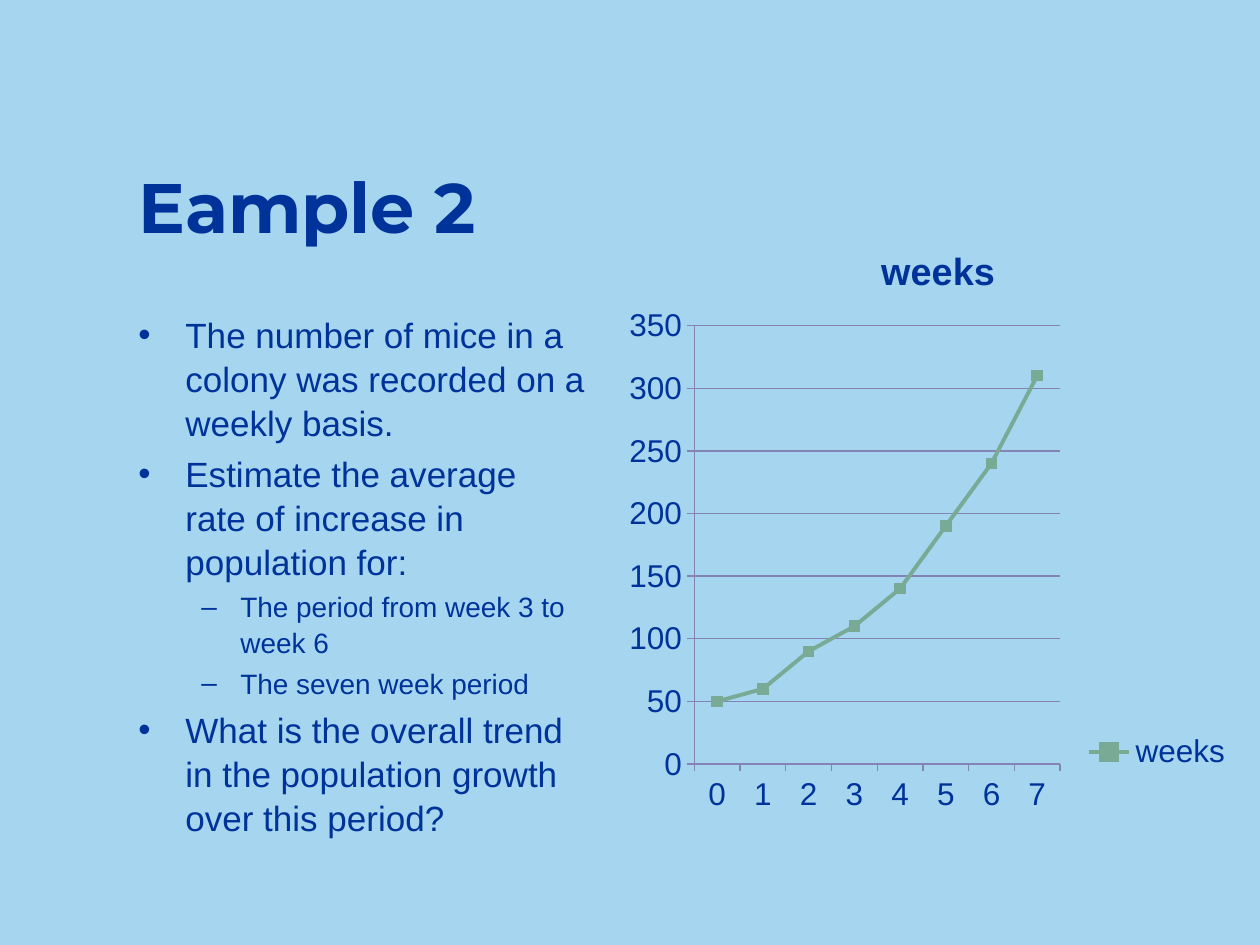
from lxml import etree
from pptx import Presentation
from pptx.chart.data import CategoryChartData
from pptx.dml.color import RGBColor
from pptx.enum.chart import XL_CHART_TYPE, XL_LEGEND_POSITION, XL_MARKER_STYLE, XL_TICK_MARK
from pptx.enum.text import MSO_ANCHOR
from pptx.oxml import parse_xml
from pptx.oxml.ns import nsdecls, qn
from pptx.util import Pt

LINES = XL_CHART_TYPE.LINE_MARKERS
RIGHT = XL_LEGEND_POSITION.RIGHT
SQUARE = XL_MARKER_STYLE.SQUARE
OUT = XL_TICK_MARK.OUTSIDE
MIDDLE = MSO_ANCHOR.MIDDLE
PX = 914400 / 126
COLORS = {"back": "A5D5EF", "text": "003399", "line": "78AA95", "grid": "8484B4"}


def color(name):
    return RGBColor.from_string(COLORS[name])


def place(part, after, inner=False, **spots):
    """Give a chart part a fixed layout, as fractions of the chart."""
    for old in part.findall(qn("c:layout")):
        part.remove(old)
    target = '<c:layoutTarget val="inner"/>' if inner else ""
    modes = "".join(f'<c:{key}Mode val="edge"/>' for key in "xy")
    sizes = "".join(f'<c:{key} val="{val}"/>' for key, val in spots.items())
    layout = parse_xml(f'<c:layout {nsdecls("c")}><c:manualLayout>{target}{modes}{sizes}'
                       '</c:manualLayout></c:layout>')
    if after:
        part.find(qn(after)).addnext(layout)
    else:
        part.insert(0, layout)


deck = Presentation()
deck.slide_width, deck.slide_height = round(1260 * PX), round(945 * PX)
slide = deck.slides.add_slide(deck.slide_layouts[6])
slide.background.fill.solid()
slide.background.fill.fore_color.rgb = color("back")

# Title
box = slide.shapes.add_textbox(*[round(n * PX) for n in (126, 116, 966, 180)])
frame = box.text_frame
frame.word_wrap = True
frame.vertical_anchor = MIDDLE
frame.text = "Eample 2"
font = frame.paragraphs[0].runs[0].font
font.name, font.size, font.bold = "Montserrat", Pt(40), True
font.color.rgb = color("text")

# Bullets: level and text
items = [
    (0, "The number of mice in a colony was recorded on a weekly basis."),
    (0, "Estimate the average rate of increase in population for:"),
    (1, "The period from week 3 to week 6"),
    (1, "The seven week period"),
    (0, "What is the overall trend in the population growth over this period?"),
]
# Mark, text size, left margin and hanging indent of each level
levels = [("•", 20, 47, 47), ("–", 16, 102, 39)]
box = slide.shapes.add_textbox(*[round(n * PX) for n in (126, 305, 473, 546)])
frame = box.text_frame
frame.word_wrap = True
for i, (level, text) in enumerate(items):
    mark, size, left, hang = levels[level]
    para = frame.add_paragraph() if i else frame.paragraphs[0]
    para.text = text
    para.level = level
    para.line_spacing = 1.05
    para.space_before = Pt(size * 0.2 if i else 0)
    props = para._p.get_or_add_pPr()
    props.set("marL", str(round(left * PX)))
    props.set("indent", str(round(-hang * PX)))
    etree.SubElement(props, qn("a:buFont")).set("typeface", "Arial")
    etree.SubElement(props, qn("a:buChar")).set("char", mark)
    font = para.runs[0].font
    font.name, font.size = "Arial", Pt(size)
    font.color.rgb = color("text")

# Line chart
data = CategoryChartData()
data.categories = [str(week) for week in range(8)]
data.add_series("weeks", (50, 60, 90, 110, 140, 190, 240, 310))
spot = [round(n * PX) for n in (620, 210, 620, 609)]
chart = slide.shapes.add_chart(LINES, *spot, data).chart
chart.font.name, chart.font.size = "Arial", Pt(18)
chart.font.color.rgb = color("text")

# Chart title and legend
chart.has_title = True
frame = chart.chart_title.text_frame
frame.text = "weeks"
font = frame.paragraphs[0].runs[0].font
font.name, font.size, font.bold = "Arial", Pt(21.6), True
font.color.rgb = color("text")
chart.has_legend = True
chart.legend.position = RIGHT
chart.legend.include_in_layout = False

# Axes
for axis in (chart.category_axis, chart.value_axis):
    axis.major_tick_mark = OUT
    axis.format.line.color.rgb = color("grid")
    axis.format.line.width = Pt(0.75)
scale = chart.value_axis
scale.minimum_scale, scale.maximum_scale, scale.major_unit = 0, 350, 50
scale.has_major_gridlines = True
scale.major_gridlines.format.line.color.rgb = color("grid")
scale.major_gridlines.format.line.width = Pt(0.75)

# Series
plot = chart.plots[0]
plot.vary_by_categories = False
series = plot.series[0]
series.smooth = False
series.format.line.color.rgb = color("line")
series.format.line.width = Pt(2.25)
series.marker.style, series.marker.size = SQUARE, 6
series.marker.format.fill.solid()
series.marker.format.fill.fore_color.rgb = color("line")
series.marker.format.line.color.rgb = color("line")

# Layout of the chart parts
root = chart._chartSpace.chart
place(root.plotArea, None, inner=True, x=0.12, y=0.19, w=0.59, h=0.72)
place(chart.chart_title._element, "c:tx", x=0.41, y=0.05)
place(chart.legend._element, "c:legendPos", x=0.74, y=0.85)

deck.save("out.pptx")
